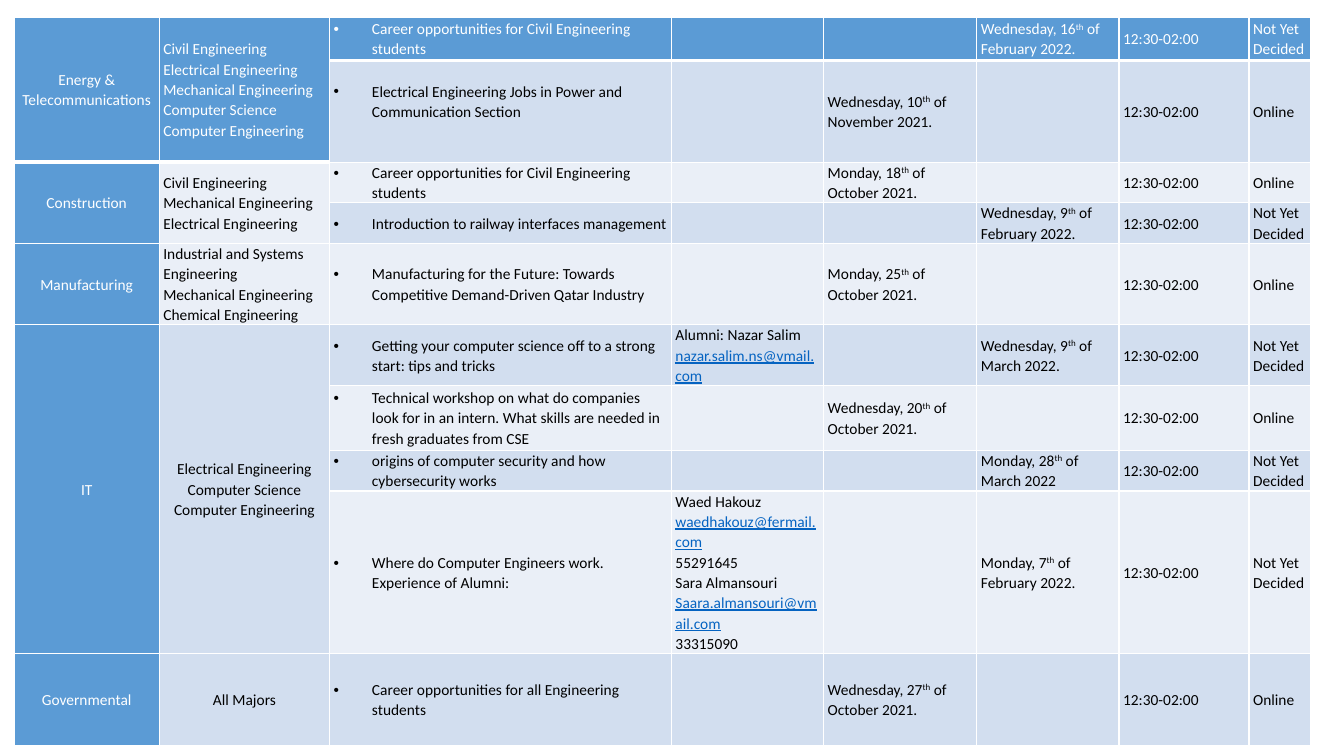
from lxml.etree import SubElement
from pptx import Presentation
from pptx.dml.color import RGBColor
from pptx.enum.text import MSO_ANCHOR, PP_ALIGN
from pptx.oxml.ns import qn
from pptx.util import Inches, Pt

COLUMN_WIDTHS = [1.44, 1.69, 3.39, 1.51, 1.52, 1.41, 1.29, 0.61]
ROW_HEIGHTS = [0.43, 0.57, 0.38, 0.38, 0.75, 0.57, 0.64, 0.38, 1.51, 0.91]
TIME = "12:30-02:00"
TOPIC_COLUMN = 2

# Sector, rows it covers, paragraphs of majors, whether the majors are centred
SECTORS = [
    ("Energy & Telecommunications", 2,
     ["Civil Engineering\nElectrical Engineering\nMechanical Engineering\nComputer Science",
      "Computer Engineering"], False),
    ("Construction", 2,
     ["Civil Engineering\nMechanical Engineering\nElectrical Engineering"], False),
    ("Manufacturing", 1,
     ["Industrial and Systems Engineering",
      "Mechanical Engineering\nChemical Engineering"], False),
    ("IT", 4,
     ["Electrical Engineering", "Computer Science", "Computer Engineering"], True),
    ("Governmental", 1, ["All Majors"], True),
]

# Topic, contact paragraphs, autumn date, spring date; "|" separates runs
SESSIONS = [
    ("Career opportunities for Civil Engineering students", [],
     "", "Wednesday, 16|th| of February 2022."),
    ("Electrical Engineering Jobs in Power and Communication Section", [],
     "Wednesday, 10|th| of November 2021.", ""),
    ("Career opportunities for Civil Engineering students", [],
     "Monday, 18|th| of October 2021.", ""),
    ("Introduction to railway interfaces management", [],
     "", "Wednesday, 9|th| of February 2022."),
    ("Manufacturing for the Future: Towards Competitive Demand-Driven Qatar Industry", [],
     "Monday, 25|th| of October 2021.", ""),
    ("Getting your computer science off to a strong start: tips and tricks",
     ["Alumni: Nazar Salim |nazar.salim.ns@vmail.com"],
     "", "Wednesday, 9|th| of March 2022."),
    ("Technical workshop on what do companies look for in an intern. "
     "What skills are needed in fresh graduates from CSE", [],
     "Wednesday, 20|th| of October 2021.", ""),
    ("origins of computer security and how cybersecurity works", [],
     "", "Monday, 28|th| of March 2022"),
    ("Where do Computer Engineers work. Experience of Alumni:",
     ["Waed Hakouz |waedhakouz@fermail.com", "55291645", "Sara Almansouri",
      "Saara.almansouri@vmail.com", "33315090"],
     "", "Monday, 7|th| of February 2022."),
    ("Career opportunities for all Engineering students", [],
     "Wednesday, 27|th| of October 2021.", ""),
]


def color(hex_value):
    return RGBColor.from_string(hex_value)


class ScheduleSlide:
    HEADER, BANDS = "5B9BD5", ("EAEFF7", "D2DEEF")
    WHITE, BLACK, LINK = "FFFFFF", "000000", "0563C1"
    CELL_FORMAT = {
        "margin_left": Inches(0.04), "margin_right": Inches(0.04),
        "margin_top": 0, "margin_bottom": 0,
        "vertical_anchor": MSO_ANCHOR.MIDDLE,
    }
    FONT_FORMAT = {"name": "Calibri", "size": Pt(11), "bold": False}

    def __init__(self, presentation):
        self.slide = presentation.slides.add_slide(presentation.slide_layouts[6])

    def add_grid(self, left, top, widths, heights):
        schedule = self.slide.shapes.add_table(
            len(heights), len(widths), Inches(left), Inches(top),
            Inches(sum(widths)), Inches(sum(heights))).table
        schedule.first_row = schedule.horz_banding = False
        for column, width in zip(schedule.columns, widths):
            column.width = Inches(width)
        for row, height in zip(schedule.rows, heights):
            row.height = Inches(height)
        for row_index in range(len(heights)):
            for column_index in range(len(widths)):
                self.style_cell(schedule.cell(row_index, column_index), row_index, column_index)
        return schedule

    def style_cell(self, cell, row_index, column_index):
        for attribute, value in self.CELL_FORMAT.items():
            setattr(cell, attribute, value)
        is_header = row_index == 0 or column_index == 0
        self.add_borders(cell, bottom_width=3 if row_index == 0 else 1)
        cell.fill.solid()
        cell.fill.fore_color.rgb = color(self.HEADER if is_header else self.BANDS[row_index % 2])

    def add_borders(self, cell, bottom_width):
        properties = cell._tc.get_or_add_tcPr()
        for position, side in enumerate(("lnL", "lnR", "lnT", "lnB")):
            width = bottom_width if side == "lnB" else 1
            line = properties.makeelement(qn(f"a:{side}"), {"w": str(Pt(width))})
            properties.insert(position, line)
            solid = SubElement(line, qn("a:solidFill"))
            SubElement(solid, qn("a:srgbClr"), val=self.WHITE)

    def add_cell_text(self, cell, paragraphs, text_color, centred=False, bulleted=False):
        frame = cell.text_frame
        frame.word_wrap = True
        for index, content in enumerate(paragraphs):
            paragraph = frame.add_paragraph() if index else frame.paragraphs[0]
            paragraph.line_spacing = 1.07
            paragraph.alignment = PP_ALIGN.CENTER if centred else PP_ALIGN.LEFT
            if bulleted:
                self.add_bullet(paragraph)
            for piece in content.split("|"):
                self.add_runs(paragraph, piece, text_color)

    def add_runs(self, paragraph, piece, text_color):
        """Add a piece with its line breaks; "th" is raised, an address is underlined."""
        for index, line in enumerate(piece.split("\n")):
            if index:
                paragraph.add_line_break()
                line_break = paragraph._p.findall(qn("a:br"))[-1]
                SubElement(line_break, qn("a:rPr"), sz="1100")
            run = paragraph.add_run()
            run.text = line
            for attribute, value in self.FONT_FORMAT.items():
                setattr(run.font, attribute, value)
            is_address = "@" in line
            run.font.underline = is_address
            run.font.color.rgb = color(self.LINK if is_address else text_color)
            if line == "th":
                run.font._element.set("baseline", "30000")

    def add_bullet(self, paragraph):
        properties = paragraph._p.get_or_add_pPr()
        properties.set("marL", str(Inches(0.38)))
        properties.set("indent", str(-Inches(0.38)))
        SubElement(properties, qn("a:buFont"), typeface="Arial")
        SubElement(properties, qn("a:buChar"), char="•")


def main():
    presentation = Presentation()
    presentation.slide_width, presentation.slide_height = Inches(13.33), Inches(7.5)
    page = ScheduleSlide(presentation)
    schedule = page.add_grid(0.14, 0.17, COLUMN_WIDTHS, ROW_HEIGHTS)

    first_row = 0
    for sector, row_count, majors, centred in SECTORS:
        sector_cell, majors_cell = (schedule.cell(first_row, column) for column in (0, 1))
        if row_count > 1:
            for column, cell in enumerate((sector_cell, majors_cell)):
                cell.merge(schedule.cell(first_row + row_count - 1, column))
        page.add_cell_text(sector_cell, [sector], page.WHITE, centred=True)
        majors_color = page.BLACK if first_row else page.WHITE
        page.add_cell_text(majors_cell, majors, majors_color, centred=centred)
        first_row += row_count

    for row, (topic, contacts, autumn, spring) in enumerate(SESSIONS):
        place = "Online" if autumn else "Not Yet Decided"
        details = [[topic], contacts, [autumn], [spring], [TIME], [place]]
        for column, paragraphs in enumerate(details, TOPIC_COLUMN):
            if any(paragraphs):
                page.add_cell_text(schedule.cell(row, column), paragraphs,
                                   page.BLACK if row else page.WHITE,
                                   bulleted=column == TOPIC_COLUMN)
    schedule.cell(1, TOPIC_COLUMN).margin_bottom = Inches(0.2)

    presentation.save("out.pptx")


if __name__ == "__main__":
    main()
